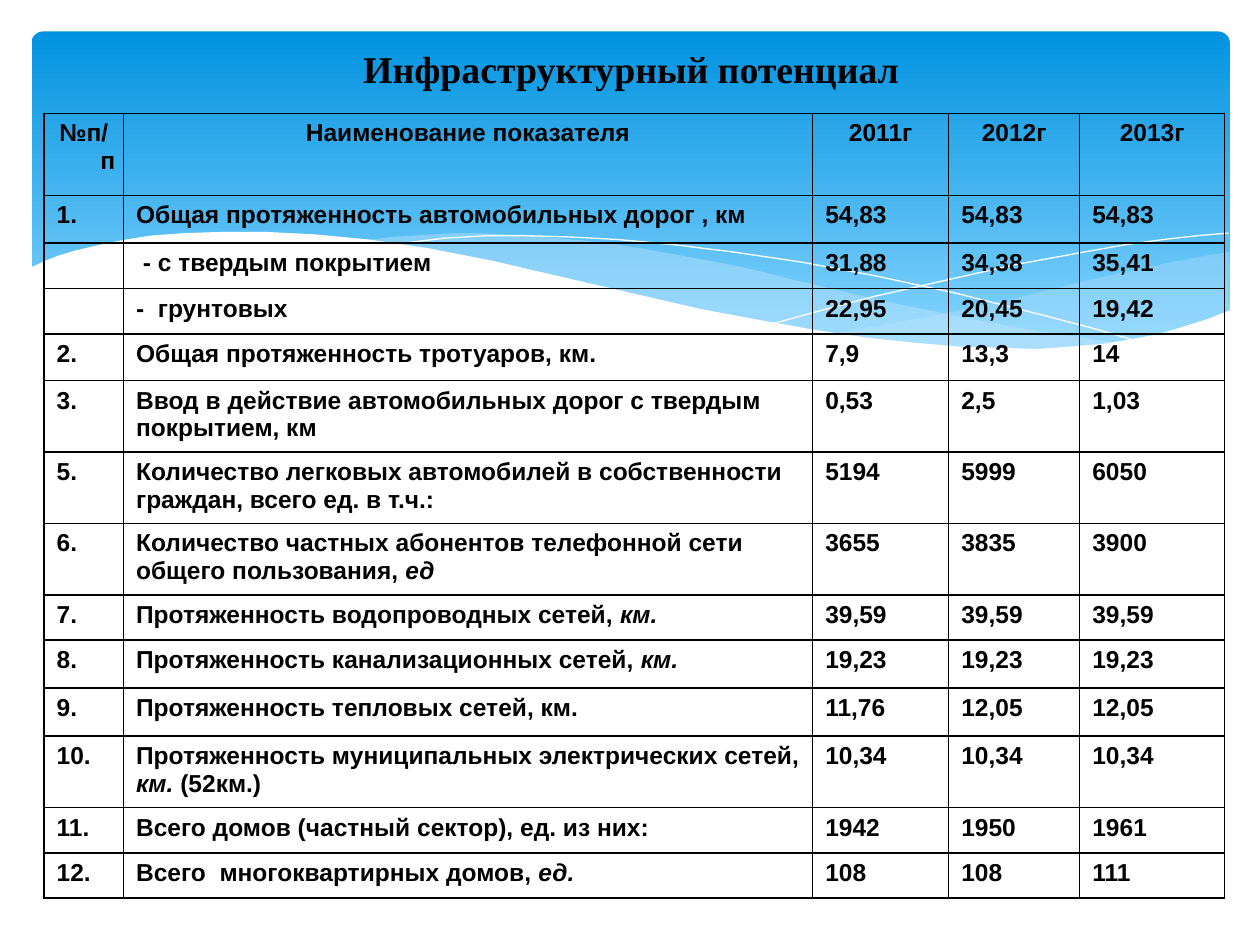
from lxml import etree
from pptx import Presentation
from pptx.dml.color import RGBColor
from pptx.enum.shapes import MSO_SHAPE
from pptx.enum.text import MSO_ANCHOR, PP_ALIGN
from pptx.oxml.ns import qn
from pptx.util import Pt

ROUND_RECT = MSO_SHAPE.ROUNDED_RECTANGLE
MIDDLE = MSO_ANCHOR.MIDDLE
CENTER = PP_ALIGN.CENTER
PX = 9144  # 100 px to the inch
COLORS = {"sky": "0293E0", "pale_sky": "83D3FE", "wave": "C6E7FC",
          "white": "FFFFFF", "black": "000000"}
RGB = {name: RGBColor.from_string(value) for name, value in COLORS.items()}


def add_curve(shapes, points, fill=None, alpha=100):
    """Draw a filled wave, or an open white hairline when fill is None."""
    builder = shapes.build_freeform(*points[0], scale=PX)
    builder.add_line_segments(points[1:], close=fill is not None)
    s = builder.convert_to_shape()
    s.shadow.inherit = False
    if fill is None:
        s.fill.background()
        s.line.color.rgb = RGB["white"]
        s.line.width = 0
        return
    s.line.fill.background()
    s.fill.solid()
    s.fill.fore_color.rgb = RGB[fill]
    if alpha < 100:
        color = s._element.spPr.find(qn("a:solidFill"))[0]
        etree.SubElement(color, qn("a:alpha"), val=str(alpha * 1000))


def add_run(p, text, font, size, italic=False):
    r = p.add_run()
    r.text = text
    r.font.name = font
    r.font.size = Pt(size)
    r.font.bold = True
    r.font.italic = italic
    r.font.color.rgb = RGB["black"]


prs = Presentation()
prs.slide_width, prs.slide_height = 1000 * PX, 750 * PX
shapes = prs.slides.add_slide(prs.slide_layouts[6]).shapes

# Blue panel with waves
s = shapes.add_shape(ROUND_RECT, 25 * PX, 25 * PX, 951 * PX, 270 * PX)
s.adjustments[0] = 0.034
s.shadow.inherit = False
s.line.fill.background()
s.fill.gradient()
s.fill.gradient_angle = 270
for stop, position, color in zip(s.fill.gradient_stops, (0, 0.9), ("sky", "pale_sky")):
    stop.position = position
    stop.color.rgb = RGB[color]

right_wave = [
    (976, 200), (962, 202), (935, 207), (906, 213), (861, 223), (805, 237),
    (753, 248), (706, 257), (661, 265), (691, 269), (719, 272), (745, 275),
    (769, 277), (803, 278), (835, 277), (863, 275), (889, 272), (913, 267),
    (935, 262), (949, 257), (963, 252), (976, 247)]
middle_wave = [
    (893, 273), (866, 269), (837, 265), (807, 260), (775, 254), (741, 247),
    (706, 240), (668, 231), (629, 222), (598, 214), (569, 208), (541, 203),
    (514, 198), (489, 194), (465, 191), (442, 189), (420, 187), (399, 186),
    (380, 185), (361, 185), (344, 186), (313, 188), (286, 191), (323, 196),
    (362, 203), (404, 211), (449, 222), (491, 232), (530, 240), (566, 248),
    (601, 255), (634, 261), (665, 266), (695, 270), (722, 274), (748, 276),
    (773, 277), (796, 278), (828, 278), (857, 277), (876, 275)]
falling_line = [
    (309, 195), (328, 192), (353, 189), (387, 187), (416, 187), (450, 188),
    (489, 190), (533, 194), (582, 200), (636, 208), (695, 219), (760, 233),
    (831, 251), (869, 261), (907, 272)]
rising_line = [
    (613, 257), (653, 246), (695, 235), (748, 223), (806, 210), (866, 199),
    (895, 194), (924, 190), (951, 187), (975, 185)]
white_wave = [
    (977, 246), (959, 253), (940, 259), (920, 265), (899, 269), (875, 273),
    (850, 275), (823, 277), (793, 276), (761, 275), (726, 272), (688, 268),
    (648, 262), (603, 254), (555, 245), (503, 233), (447, 220), (391, 207),
    (340, 197), (292, 190), (250, 186), (211, 184), (177, 184), (146, 185),
    (119, 187), (95, 191), (76, 195), (59, 199), (46, 203), (36, 207),
    (23, 213), (23, 329), (977, 329)]
add_curve(shapes, right_wave, "wave", 29)
add_curve(shapes, middle_wave, "wave", 40)
add_curve(shapes, falling_line)
add_curve(shapes, rising_line)
add_curve(shapes, white_wave, "white")

# Title
tf = shapes.add_textbox(51 * PX, 36 * PX, 900 * PX, 36 * PX).text_frame
tf.word_wrap = True
tf.vertical_anchor = MIDDLE
tf.paragraphs[0].alignment = CENTER
add_run(tf.paragraphs[0], "Инфраструктурный потенциал", "Times New Roman", 21.6)

# Table: row height, then cell texts; words between asterisks are italic
ROWS = [
    (65, "№п/п", "Наименование показателя", "2011г", "2012г", "2013г"),
    (38, "1.", "Общая протяженность автомобильных дорог , км", "54,83", "54,83", "54,83"),
    (36, "", " - с твердым покрытием", "31,88", "34,38", "35,41"),
    (36, "", "-  грунтовых", "22,95", "20,45", "19,42"),
    (37, "2.", "Общая протяженность тротуаров, км.", "7,9", "13,3", "14"),
    (54, "3.", "Ввод в действие автомобильных дорог с твердым покрытием, км",
     "0,53", "2,5", "1,03"),
    (54, "5.", "Количество легковых автомобилей в собственности граждан, всего ед. в т.ч.:",
     "5194", "5999", "6050"),
    (54, "6.", "Количество частных абонентов телефонной сети общего пользования, *ед*",
     "3655", "3835", "3900"),
    (36, "7.", "Протяженность водопроводных сетей, *км.*", "39,59", "39,59", "39,59"),
    (38, "8.", "Протяженность канализационных сетей, *км.*", "19,23", "19,23", "19,23"),
    (38, "9.", "Протяженность тепловых сетей, км.", "11,76", "12,05", "12,05"),
    (54, "10.", "Протяженность муниципальных электрических сетей,* км.* (52км.)",
     "10,34", "10,34", "10,34"),
    (36, "11.", "Всего домов (частный сектор), ед. из них:", "1942", "1950", "1961"),
    (36, "12.", "Всего  многоквартирных домов, *ед.*", "108", "108", "111"),
]
COL_WIDTHS = [63, 547, 108, 104, 115]
NAME_COL = 1

table = shapes.add_table(len(ROWS), len(COL_WIDTHS), 35 * PX, 90 * PX,
                         sum(COL_WIDTHS) * PX, sum(row[0] for row in ROWS) * PX).table
table.first_row = False
table.horz_banding = False
for column, width in zip(table.columns, COL_WIDTHS):
    column.width = width * PX

for i, (height, *texts) in enumerate(ROWS):
    table.rows[i].height = height * PX
    for j, text in enumerate(texts):
        cell = table.cell(i, j)
        tcPr = cell._tc.get_or_add_tcPr()
        for side in ("lnL", "lnR", "lnT", "lnB"):
            ln = etree.SubElement(tcPr, qn(f"a:{side}"), w=str(Pt(1)))
            line_fill = etree.SubElement(ln, qn("a:solidFill"))
            etree.SubElement(line_fill, qn("a:srgbClr"), val=COLORS["black"])
        cell.fill.background()
        cell.margin_left = cell.margin_right = 10 * PX
        cell.margin_top = cell.margin_bottom = 5 * PX
        p = cell.text_frame.paragraphs[0]
        if i == 0:
            p.alignment = CENTER
        if i == 0 or j != NAME_COL:
            pPr = p._p.get_or_add_pPr()
            pPr.set("marL", str(38 * PX))
            pPr.set("indent", str(-38 * PX))
        if not text:
            p._p.get_or_add_endParaRPr().set("sz", "1400")
        for k, part in enumerate(text.split("*")):
            if part:
                add_run(p, part, "Arial", 14, italic=k % 2 == 1)

prs.save("out.pptx")
